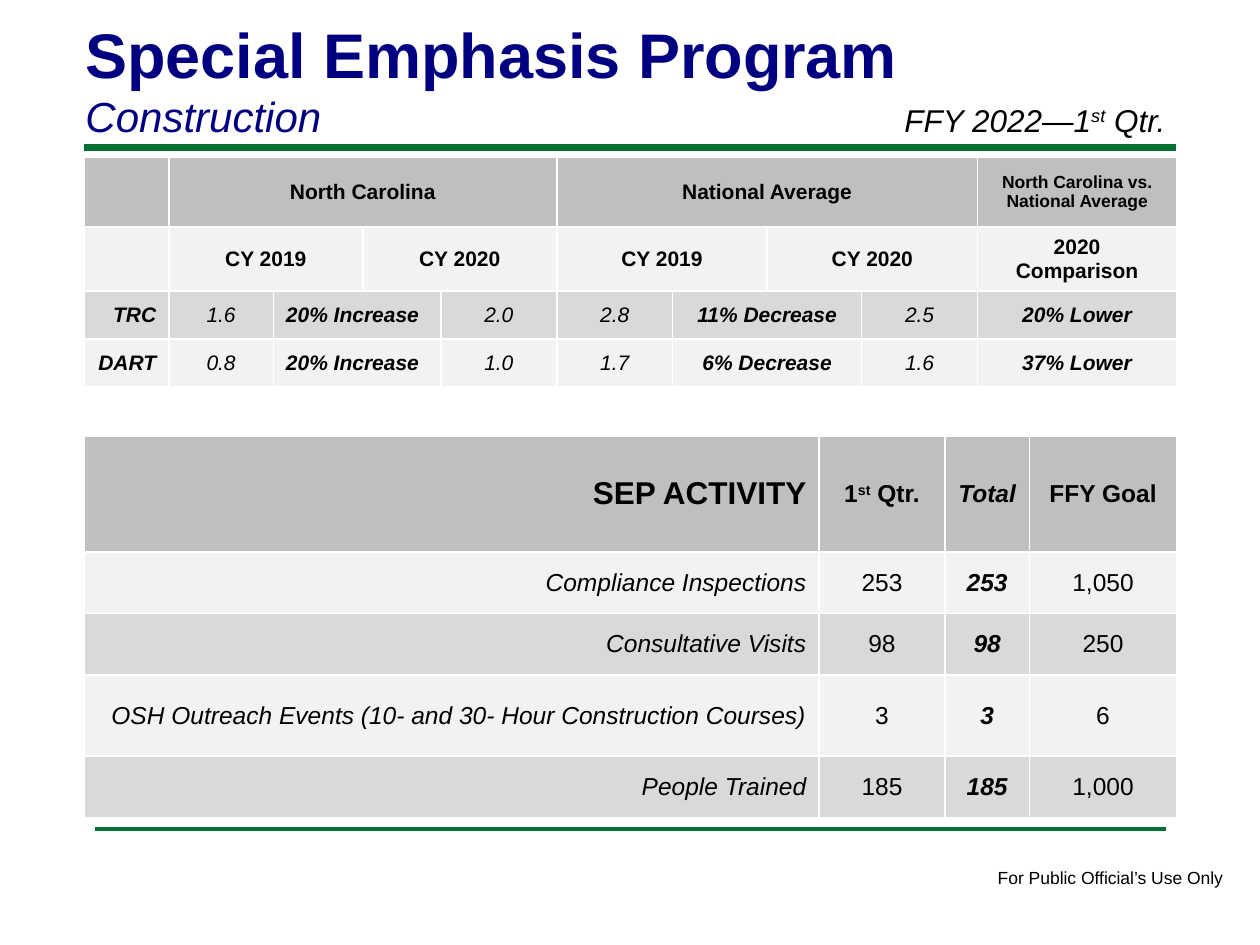
"""Build the Special Emphasis Program slide for construction."""
from dataclasses import dataclass
from typing import Any, Sequence

from lxml.etree import SubElement
from pptx import Presentation
from pptx.dml.color import RGBColor
from pptx.enum.shapes import MSO_CONNECTOR
from pptx.enum.text import MSO_ANCHOR as Anchor, PP_ALIGN as Align
from pptx.oxml.ns import qn
from pptx.util import Inches, Pt


@dataclass(frozen=True)
class Theme:
    font: str = "Arial"
    navy: str = "000080"
    black: str = "000000"
    green: str = "007030"
    white: str = "FFFFFF"
    header: str = "BFBFBF"
    light: str = "F2F2F2"
    dark: str = "D9D9D9"
    title: int = 36
    subtitle: int = 24
    heading: int = 18
    activity: int = 14
    rates: int = 12
    small: int = 10


@dataclass(frozen=True)
class Cell:
    text: str = ""
    size: int = 12
    span: int = 1
    bold: bool = False
    italic: bool = False
    align: Align = Align.CENTER


@dataclass(frozen=True)
class Row:
    height: float
    fill: str
    cells: Sequence[Cell]


@dataclass(frozen=True)
class Rule:
    left: float
    right: float
    y: float
    weight: float


THEME = Theme()


def write(paragraph: Any, text: str, *, size: int, color: str = THEME.black,
          bold: bool = False, italic: bool = False, align: Align = Align.LEFT) -> None:
    """Write text into a paragraph, raising the parts between carets."""
    paragraph.alignment = align
    for index, part in enumerate(text.split("^")):
        run = paragraph.add_run()
        run.text = part
        font = run.font
        font.name, font.size, font.bold, font.italic = THEME.font, Pt(size), bold, italic
        font.color.rgb = RGBColor.from_string(color)
        if index % 2:
            font._element.set("baseline", "30000")


def add_box(slide: Any, left: float, top: float, width: float, height: float,
            wrap: bool = True, anchor: Anchor = Anchor.TOP) -> Any:
    """Add a text box and return its text frame."""
    frame = slide.shapes.add_textbox(*map(Inches, (left, top, width, height))).text_frame
    frame.word_wrap, frame.vertical_anchor = wrap, anchor
    return frame


def add_rule(slide: Any, rule: Rule) -> None:
    """Draw a horizontal green rule."""
    line = slide.shapes.add_connector(
        MSO_CONNECTOR.STRAIGHT, *map(Inches, (rule.left, rule.y, rule.right, rule.y)))
    line.line.color.rgb = RGBColor.from_string(THEME.green)
    line.line.width = Pt(rule.weight)
    SubElement(line._element.spPr, qn("a:effectLst"))


def style_cell(target: Any, fill: str) -> None:
    """Give a cell thin white borders and a solid fill."""
    properties = target._tc.get_or_add_tcPr()
    for side in ("lnL", "lnR", "lnT", "lnB"):
        border = SubElement(properties, qn(f"a:{side}"), w=str(Pt(1)))
        SubElement(SubElement(border, qn("a:solidFill")), qn("a:srgbClr"), val=THEME.white)
    target.fill.solid()
    target.fill.fore_color.rgb = RGBColor.from_string(fill)
    target.vertical_anchor = Anchor.MIDDLE


def add_grid(slide: Any, left: float, top: float,
             widths: Sequence[float], rows: Sequence[Row]) -> None:
    """Add a table whose cells may span several columns."""
    height = sum(row.height for row in rows)
    table = slide.shapes.add_table(
        len(rows), len(widths), *map(Inches, (left, top, sum(widths), height))).table
    table.first_row = table.horz_banding = False
    for column, width in zip(table.columns, widths):
        column.width = Inches(width)
    for r, row in enumerate(rows):
        table.rows[r].height = Inches(row.height)
        for c in range(len(widths)):
            style_cell(table.cell(r, c), row.fill)
        c = 0
        for cell in row.cells:
            target = table.cell(r, c)
            if cell.span > 1:
                target.merge(table.cell(r, c + cell.span - 1))
            if cell.text:
                write(target.text_frame.paragraphs[0], cell.text, size=cell.size,
                      bold=cell.bold, italic=cell.italic, align=cell.align)
            c += cell.span


def rate_row(fill: str, name: str, state: Sequence[str],
             nation: Sequence[str], comparison: str) -> Row:
    """Describe one injury rate with its changes."""
    def value(text: str) -> Cell:
        return Cell(text, italic=True)

    def change(text: str, span: int = 2, align: Align = Align.CENTER) -> Cell:
        return Cell(text, span=span, bold=True, italic=True, align=align)

    return Row(0.38, fill, [
        change(name, 1, Align.RIGHT),
        value(state[0]), change(state[1], align=Align.LEFT), value(state[2]),
        value(nation[0]), change(nation[1]), value(nation[2]),
        change(comparison, 1)])


def activity_row(height: float, fill: str, name: str, count: str, goal: str) -> Row:
    """Describe one activity whose total equals its first quarter."""
    size = THEME.activity
    return Row(height, fill, [
        Cell(name, size, italic=True, align=Align.RIGHT), Cell(count, size),
        Cell(count, size, bold=True, italic=True), Cell(goal, size)])


def main() -> None:
    """Build and save the slide."""
    deck = Presentation()
    deck.slide_width, deck.slide_height = Inches(10), Inches(7.5)
    slide = deck.slides.add_slide(deck.slide_layouts[6])

    for rule in (Rule(0.67, 9.33, 1.17, 4), Rule(0.75, 9.25, 6.58, 2)):
        add_rule(slide, rule)
    footer = add_box(slide, 7.82, 6.83, 2.01, 0.27, wrap=False)
    write(footer.paragraphs[0], "For Public Official’s Use Only", size=THEME.small)

    title = add_box(slide, 0.58, 0.06, 8.25, 1.11, anchor=Anchor.BOTTOM)
    write(title.paragraphs[0], "Special Emphasis Program",
          size=THEME.title, color=THEME.navy, bold=True)
    write(title.add_paragraph(), "Construction",
          size=THEME.subtitle, color=THEME.navy, italic=True)

    activity = THEME.activity
    add_grid(slide, 0.67, 3.46, [5.83, 1, 0.67, 1.17], [
        Row(0.92, THEME.header, [
            Cell("SEP ACTIVITY", THEME.heading, bold=True, align=Align.RIGHT),
            Cell("1^st^ Qtr.", activity, bold=True),
            Cell("Total", activity, bold=True, italic=True),
            Cell("FFY Goal", activity, bold=True)]),
        activity_row(0.49, THEME.light, "Compliance Inspections", "253", "1,050"),
        activity_row(0.49, THEME.dark, "Consultative Visits", "98", "250"),
        activity_row(0.64, THEME.light,
                     "OSH Outreach Events (10- and 30- Hour Construction Courses)", "3", "6"),
        activity_row(0.49, THEME.dark, "People Trained", "185", "1,000")])

    years = [Cell(year, THEME.rates, span=2, bold=True) for year in ("CY 2019", "CY 2020")]
    add_grid(slide, 0.67, 1.25, [0.67, 0.83, 0.71, 0.62, 0.92, 0.92, 0.75, 0.75, 0.92, 1.58], [
        Row(0.55, THEME.header, [
            Cell(), Cell("North Carolina", THEME.rates, span=4, bold=True),
            Cell("National Average", THEME.rates, span=4, bold=True),
            Cell("North Carolina vs. National Average", THEME.small, bold=True)]),
        Row(0.51, THEME.light, [
            Cell(), *years, *years, Cell("2020 Comparison", THEME.rates, bold=True)]),
        rate_row(THEME.dark, "TRC", ("1.6", "20% Increase", "2.0"),
                 ("2.8", "11% Decrease", "2.5"), "20% Lower"),
        rate_row(THEME.light, "DART", ("0.8", "20% Increase", "1.0"),
                 ("1.7", "6% Decrease", "1.6"), "37% Lower")])

    period = add_box(slide, 7.08, 0.75, 2.5, 0.4)
    write(period.paragraphs[0], "FFY 2022—1^st^ Qtr.", size=THEME.heading, italic=True)
    deck.save("out.pptx")


if __name__ == "__main__":
    main()
